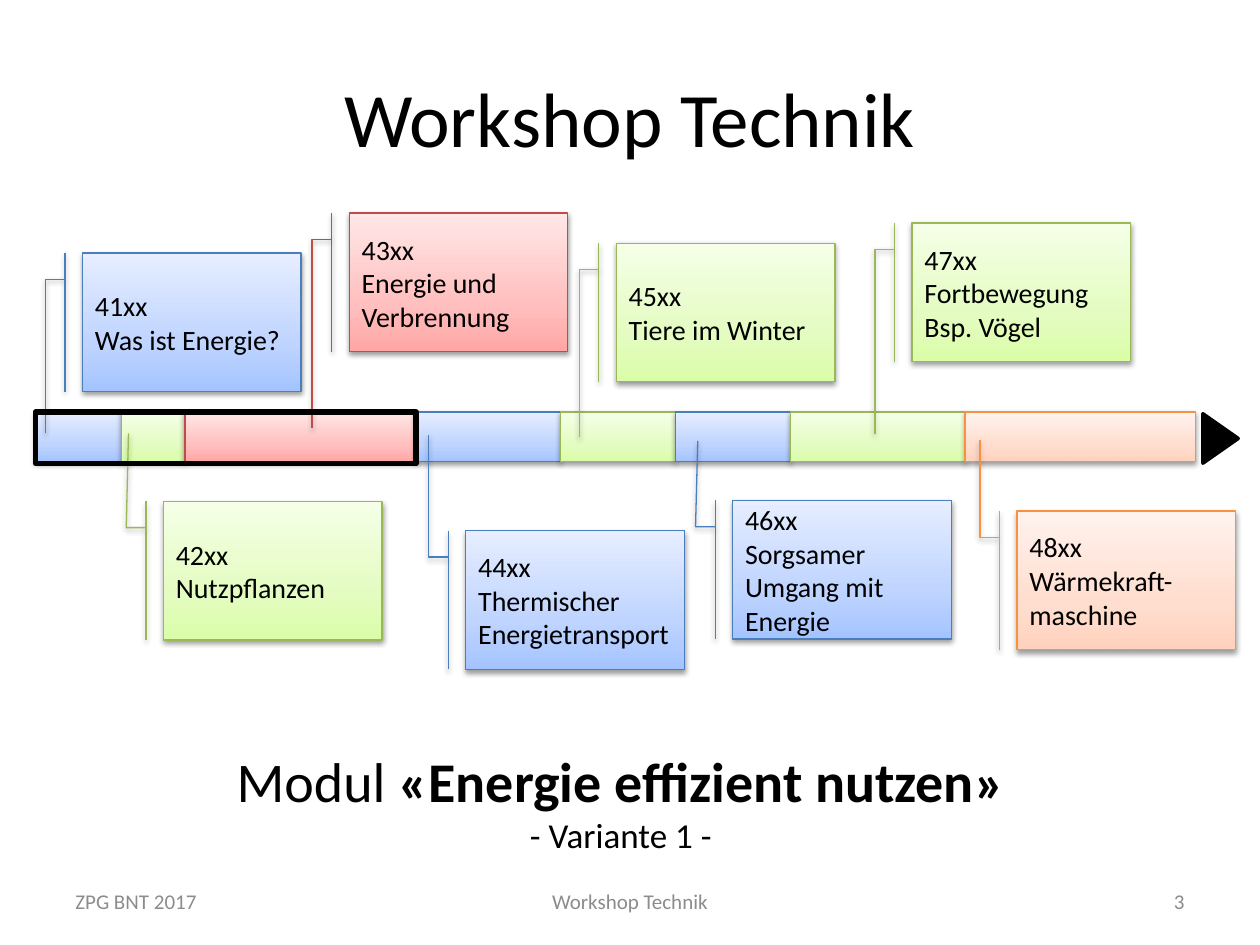
from lxml import etree
from pptx import Presentation
from pptx.dml.color import RGBColor
from pptx.enum import shapes, text
from pptx.oxml import parse_xml
from pptx.oxml.ns import nsdecls, qn
from pptx.util import Pt

FONT = "Calibri"
COLORS = {"black": "000000", "grey": "8C8C8C"}
# Line colour, then the gradient from bottom to top
THEMES = {
    "blue": ("4B7EBC", ("A4C4FF", "BFD4FF", "E6EEFF")),
    "green": ("98B955", ("DAFDA7", "E4FCC2", "F5FFE7")),
    "red": ("BF4C48", ("FFA6A5", "FFC0BF", "FFE7E7")),
    "orange": ("F69240", ("FFD2BD", "FFDED0", "FFF2ED")),
}
GRADIENT_STOPS = (0, 35, 100)

# Theme, left, top, pointer end (down, across as shares of the box), text
UNITS = [
    ("blue", 47.2, 144.6, (1.3, -0.17), ["41xx", "Was ist Energie?"]),
    ("green", 93.4, 286.5, (-0.49, -0.16), ["42xx", "Nutzpflanzen"]),
    ("red", 199.6, 121.8, (1.55, -0.17), ["43xx", "Energie und Verbrennung"]),
    ("blue", 266.2, 303.3, (-0.69, -0.17), ["44xx", "Thermischer Energietransport"]),
    ("green", 352.2, 139, (1.4, -0.17), ["45xx", "Tiere im Winter"]),
    ("blue", 418.7, 286, (-0.43, -0.16), ["46xx", "Sorgsamer Umgang mit Energie"]),
    ("green", 521.2, 127.5, (1.52, -0.17), ["47xx", "Fortbewegung", "Bsp. Vögel"]),
    ("orange", 581.2, 292, (-0.51, -0.17), ["48xx", "Wärmekraft-maschine"]),
]
CALLOUT_W, CALLOUT_H = 124.9, 79.2
BAR_EDGES = [20.2, 69.6, 105.7, 237.7, 320.1, 385.9, 451.6, 551.5, 683.3]
BAR_TOP, BAR_H = 235.5, 28.3

# Box, alignment, colour, word wrap, paragraphs of (text, size, bold) runs
LABELS = [
    ((36, 21.6, 648, 90), "CENTER", "black", True, [[("Workshop Technik", 44, False)]]),
    ((36, 500.5, 168, 28.75), "LEFT", "grey", True, [[("ZPG BNT 2017", 12, False)]]),
    ((246, 500.5, 228, 28.75), "CENTER", "grey", True, [[("Workshop Technik", 12, False)]]),
    ((516, 500.5, 168, 28.75), "RIGHT", "grey", True, [[("3", 12, False)]]),
    ((125.5, 422.6, 458.5, 70.6), "CENTER", "black", False,
     [[("Modul", 32, False), (" «Energie effizient nutzen»", 32, True)],
      [("- Variante 1 -", 20, False)]]),
]


def rgb(name):
    return RGBColor.from_string(COLORS[name])


def write(sp, paragraphs, align, color, wrap=True):
    tf = sp.text_frame
    tf.word_wrap = wrap
    tf.vertical_anchor = text.MSO_ANCHOR.MIDDLE
    for i, runs in enumerate(paragraphs):
        p = tf.add_paragraph() if i else tf.paragraphs[0]
        p.alignment = getattr(text.PP_ALIGN, align)
        for content, size, bold in runs:
            r = p.add_run()
            r.text = content
            for key, value in {"name": FONT, "size": Pt(size), "bold": bold}.items():
                setattr(r.font, key, value)
            r.font.color.rgb = rgb(color)


def add_plain(slide, kind, box, line_width):
    sp = slide.shapes.add_shape(kind, *map(Pt, box))
    sp.shadow.inherit = False
    sp.line.color.rgb = rgb("black")
    sp.line.width = Pt(line_width)
    return sp


def add_themed(slide, kind, box, theme):
    """Shape with the theme's gradient and line, and a soft shadow below."""
    line, stops = THEMES[theme]
    sp = add_plain(slide, kind, box, 0.75)
    sp.line.color.rgb = RGBColor.from_string(line)
    sp.fill.gradient()
    sp.fill.gradient_angle = 90
    spPr = sp._element.spPr
    stop_list = spPr.find(qn("a:gradFill")).find(qn("a:gsLst"))
    for old in list(stop_list):
        stop_list.remove(old)
    for pos, color in zip(GRADIENT_STOPS, stops):
        gs = etree.SubElement(stop_list, qn("a:gs"), pos=str(pos * 1000))
        etree.SubElement(gs, qn("a:srgbClr"), val=color)
    spPr.find(qn("a:effectLst")).append(parse_xml(
        f'<a:outerShdw {nsdecls("a")} blurRad="{Pt(3.1)}" dist="{Pt(1.6)}" '
        'dir="5400000" rotWithShape="0"><a:srgbClr val="000000">'
        '<a:alpha val="38000"/></a:srgbClr></a:outerShdw>'))
    return sp


def main():
    prs = Presentation()
    prs.slide_width, prs.slide_height = Pt(720), Pt(540)
    slide = prs.slides.add_slide(prs.slide_layouts[6])
    kinds = shapes.MSO_SHAPE

    for box, align, color, wrap, paragraphs in LABELS:
        write(slide.shapes.add_textbox(*map(Pt, box)), paragraphs, align, color, wrap)

    for unit, left, right in zip(UNITS, BAR_EDGES, BAR_EDGES[1:]):
        add_themed(slide, kinds.RECTANGLE, (left, BAR_TOP, right - left, BAR_H), unit[0])

    arrow = add_plain(slide, kinds.ISOSCELES_TRIANGLE, (683.3, 240.5, 28.3, 20.2), 2)
    arrow.rotation = 90
    arrow.fill.solid()
    arrow.fill.fore_color.rgb = rgb("black")

    for theme, left, top, pointer_end, lines in UNITS:
        sp = add_themed(slide, kinds.LINE_CALLOUT_2_BORDER_AND_ACCENT_BAR,
                        (left, top, CALLOUT_W, CALLOUT_H), theme)
        for i, value in enumerate((0.19, -0.08, 0.19, -0.17, *pointer_end)):
            sp.adjustments[i] = value
        write(sp, [[(line, 16, False)] for line in lines], "LEFT", "black")

    frame = add_plain(slide, kinds.RECTANGLE,
                      (BAR_EDGES[0], BAR_TOP, BAR_EDGES[3] - BAR_EDGES[0], 29.5), 3)
    frame.fill.background()

    prs.save("out.pptx")


if __name__ == "__main__":
    main()
